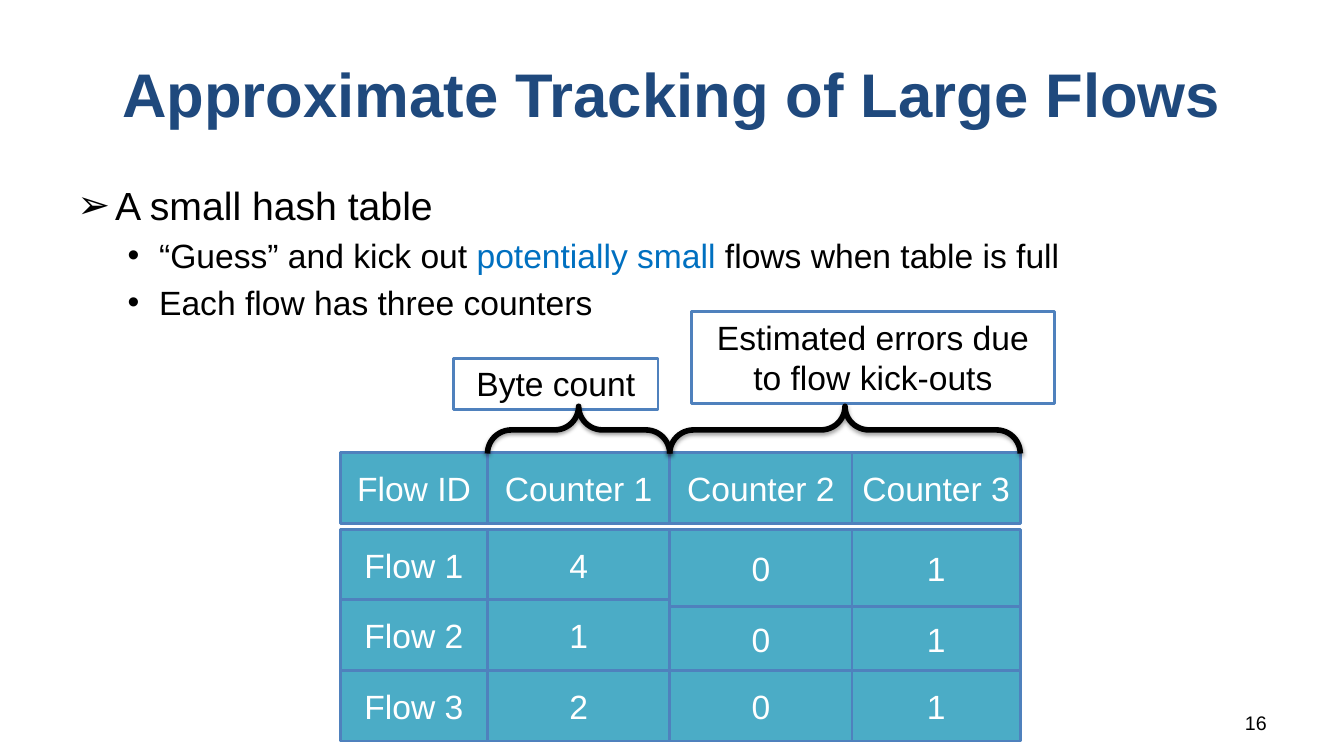
from itertools import accumulate
from lxml.etree import SubElement as Sub
from pptx import Presentation
from pptx.dml.color import RGBColor
from pptx.enum.shapes import MSO_SHAPE as Shape
from pptx.enum.text import MSO_ANCHOR as Anchor, MSO_AUTO_SIZE as Fit, PP_ALIGN as Align
from pptx.oxml.ns import qn
from pptx.util import Pt

NAVY = RGBColor(0x1F, 0x49, 0x7D)
BLUE = RGBColor(0x00, 0x70, 0xC0)
EDGE = RGBColor(0x4F, 0x81, 0xBD)
TEAL = RGBColor(0x4B, 0xAC, 0xC6)
BLACK = RGBColor(0, 0, 0)
WHITE = RGBColor(255, 255, 255)


def write(para, text, size=24, color=BLACK, bold=False, align=None):
    run = para.add_run()
    run.text = text
    font = run.font
    font.name, font.size, font.bold = "Arial", Pt(size), bold
    font.color.rgb = color
    if align is not None:
        para.alignment = align


def place(item, box):
    item.left, item.top, item.width, item.height = map(Pt, box)


def add_title(slide, box):
    title = slide.shapes.title
    place(title, box)
    frame = title.text_frame
    frame.auto_size = Fit.NONE
    frame.vertical_anchor = Anchor.MIDDLE
    write(frame.paragraphs[0], "Approximate Tracking of Large Flows",
          size=44, color=NAVY, bold=True, align=Align.CENTER)


def mark(para, char, left, hang):
    props = para._p.get_or_add_pPr()
    props.set("marL", str(Pt(left)))
    props.set("indent", str(-Pt(hang)))
    Sub(props, qn("a:buFont")).set("typeface", "Arial")
    Sub(props, qn("a:buChar")).set("char", char)


def add_list(slide, box):
    body = slide.placeholders[1]
    place(body, box)
    frame = body.text_frame
    frame.auto_size = Fit.NONE
    head = frame.paragraphs[0]
    mark(head, "➢", 27, 27)
    write(head, "A small hash table", size=28)
    points = [
        [("“Guess” and kick out ", BLACK), ("potentially small", BLUE),
         (" flows when table is full", BLACK)],
        [("Each flow has three counters", BLACK)],
    ]
    for parts in points:
        para = frame.add_paragraph()
        para.level = 1
        mark(para, "•", 58.5, 22.5)
        for text, color in parts:
            write(para, text, color=color)


def add_box(slide, box, text, fill, color, anchor, pad):
    rect = slide.shapes.add_shape(Shape.RECTANGLE, *map(Pt, box))
    rect.shadow.inherit = False
    rect.fill.solid()
    rect.fill.fore_color.rgb = fill
    rect.line.color.rgb = EDGE
    rect.line.width = Pt(2)
    frame = rect.text_frame
    frame.word_wrap = True
    frame.vertical_anchor = anchor
    frame.margin_left = frame.margin_right = Pt(pad)
    write(frame.paragraphs[0], text, color=color, align=Align.CENTER)


def add_grid(slide, box):
    left, top, width, height = box
    row = 50.4
    low = height - 3 * row
    even = [(0, row)] + [(low + i * row, row) for i in range(3)]
    split = [even[0], (low, row + 5), (low + row + 5, row - 5), even[3]]
    cols = [
        (105, even, ["Flow ID", "Flow 1", "Flow 2", "Flow 3"]),
        (130.2, even, ["Counter 1", "4", "1", "2"]),
        (130.2, split, ["Counter 2", "0", "0", "0"]),
        (width - 365.4, split, ["Counter 3", "1", "1", "1"]),
    ]
    starts = accumulate((col[0] for col in cols), initial=left)
    for x, (wide, rows, texts) in zip(starts, cols):
        for (y, high), text in zip(rows, texts):
            add_box(slide, (x, top + y, wide, high), text,
                    TEAL, WHITE, Anchor.MIDDLE, 0)


def add_label(slide, box, text):
    add_box(slide, box, text, WHITE, BLACK, Anchor.TOP, 7.2)


def add_brace(slide, box):
    left, top, width, height = box
    x, y = left + (width - height) / 2, top + (height - width) / 2
    brace = slide.shapes.add_shape(Shape.LEFT_BRACE, *map(Pt, (x, y, height, width)))
    brace.rotation = 90
    brace.adjustments[0] = 0.506
    brace.adjustments[1] = 0.5
    brace.fill.background()
    brace.line.color.rgb = BLACK
    brace.line.width = Pt(4)
    brace.shadow.inherit = False
    effect = brace._element.spPr.find(qn("a:effectLst"))
    shade = Sub(effect, qn("a:outerShdw"), blurRad=str(Pt(3.1)),
                dist=str(Pt(1.6)), dir="5400000", rotWithShape="0")
    tint = Sub(shade, qn("a:srgbClr"), val=str(BLACK))
    Sub(tint, qn("a:alpha"), val="38000")


def add_number(slide, box):
    frame = slide.shapes.add_textbox(*map(Pt, box)).text_frame
    frame.word_wrap = True
    write(frame.paragraphs[0], "16", size=14, align=Align.RIGHT)


def main():
    deck = Presentation()
    deck.slide_width, deck.slide_height = Pt(960), Pt(540)
    slide = deck.slides.add_slide(deck.slide_layouts[1])
    add_title(slide, (48, 21.6, 864, 90))
    add_list(slide, (48, 126, 864, 110))
    add_number(slide, (688, 504, 224, 25))
    add_grid(slide, (243.2, 323.5, 485.6, 205.8))
    add_label(slide, (324, 256, 146, 36.4), "Byte count")
    add_label(slide, (494, 222.5, 259, 65.5), "Estimated errors due to flow kick-outs")
    add_brace(slide, (478.4, 290.2, 250.4, 33.8))
    add_brace(slide, (348.2, 290.2, 130.2, 33.8))
    deck.save("out.pptx")


if __name__ == "__main__":
    main()
